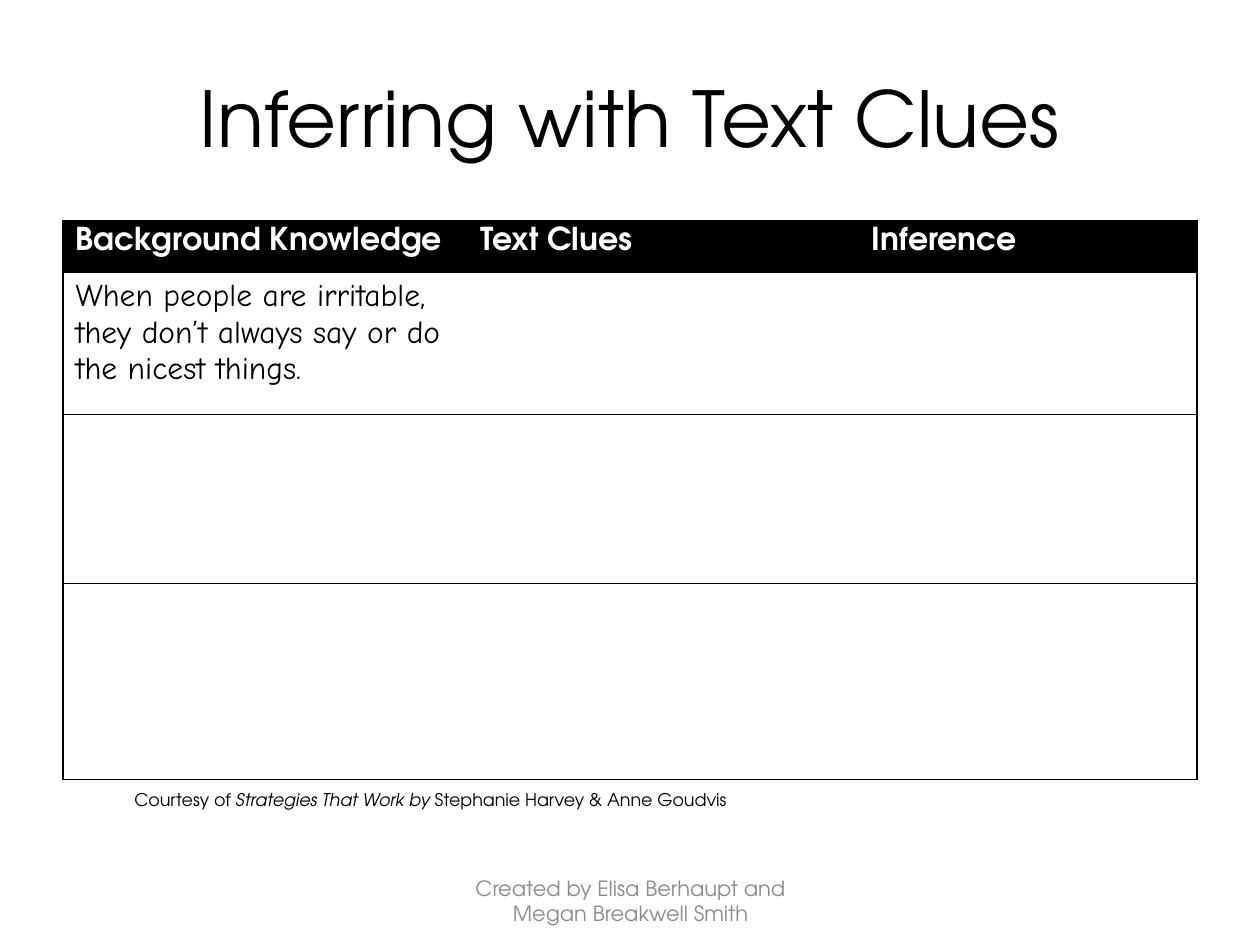
from lxml.etree import SubElement
from pptx import Presentation
from pptx.dml.color import RGBColor as RGB
from pptx.enum.text import MSO_ANCHOR as Anchor, PP_ALIGN as Align
from pptx.oxml.ns import qn
from pptx.util import Inches, Pt

HUES = {"ink": "000000", "paper": "FFFFFF", "gray": "8C8C8C"}
SANS, HAND = "TeX Gyre Adventor", "Comic Neue"
COLS = [3.21, 3.11, 2.68]
ROWS = [0.41, 1.13, 1.34, 1.56]
HEADS = ["Background Knowledge", "Text Clues", "Inference"]
BODY = "When people are irritable, they don’t always say or do the nicest things."


class Page:
    """Holds the style and the current slide, and adds elements to it."""

    def __init__(self, deck):
        self.slide = deck.slides.add_slide(deck.slide_layouts[6])

    def run(self, para, words, hue="ink", **look):
        run = para.add_run()
        run.text = words
        for key, val in {"name": SANS, "bold": False, **look}.items():
            setattr(run.font, key, val)
        run.font.color.rgb = RGB.from_string(HUES[hue])

    def text(self, spot, parts, size, hue="ink", **form):
        frame = self.slide.shapes.add_textbox(*map(Inches, spot)).text_frame
        for key, val in {"word_wrap": True, **form}.items():
            setattr(frame, key, val)
        para = frame.paragraphs[0]
        para.alignment = Align.CENTER
        for words, look in parts:
            self.run(para, words, hue, size=Pt(size), **look)

    def edge(self, cell, side, shown):
        line = SubElement(cell._tc.get_or_add_tcPr(), qn(f"a:ln{side}"), w=str(Pt(0.75)))
        if shown:
            fill = SubElement(line, qn("a:solidFill"))
            SubElement(fill, qn("a:srgbClr"), val=HUES["ink"])
        else:
            SubElement(line, qn("a:noFill"))

    def table(self, left, top, cols, rows):
        spot = map(Inches, (left, top, sum(cols), sum(rows)))
        grid = self.slide.shapes.add_table(len(rows), len(cols), *spot).table
        grid.horz_banding = grid.first_row = False
        for col, width in zip(grid.columns, cols):
            col.width = Inches(width)
        for row, height in zip(grid.rows, rows):
            row.height = Inches(height)
        for r in range(len(rows)):
            for c in range(len(cols)):
                cell = grid.cell(r, c)
                shown = {"L": c == 0, "R": c == len(cols) - 1, "T": True, "B": True}
                for side, flag in shown.items():
                    self.edge(cell, side, flag)
                cell.fill.solid()
                cell.fill.fore_color.rgb = RGB.from_string(HUES["paper" if r else "ink"])
        return grid

    def fill(self, cell, words, hue="ink", **look):
        self.run(cell.text_frame.paragraphs[0], words, hue, size=Pt(18), **look)


def main():
    deck = Presentation()
    deck.slide_width, deck.slide_height = Inches(10), Inches(7.5)
    page = Page(deck)
    page.text((0.5, 0.3, 9, 1.25), [("Inferring with Text Clues", {})], 44,
              vertical_anchor=Anchor.MIDDLE)
    grid = page.table(0.5, 1.75, COLS, ROWS)
    for c, head in enumerate(HEADS):
        page.fill(grid.cell(0, c), head, "paper", bold=True)
    page.fill(grid.cell(1, 0), BODY, name=HAND)
    page.text((3.42, 6.95, 3.17, 0.4),
              [("Created by Elisa Berhaupt and Megan Breakwell Smith", {})],
              12, "gray", vertical_anchor=Anchor.MIDDLE)
    page.text((0.49, 5.91, 5.85, 1.04),
              [("Courtesy of ", {}), ("Strategies That Work by ", {"italic": True}),
               ("Stephanie Harvey & Anne Goudvis", {})],
              10, margin_top=Inches(0.35))
    deck.save("out.pptx")


if __name__ == "__main__":
    main()
